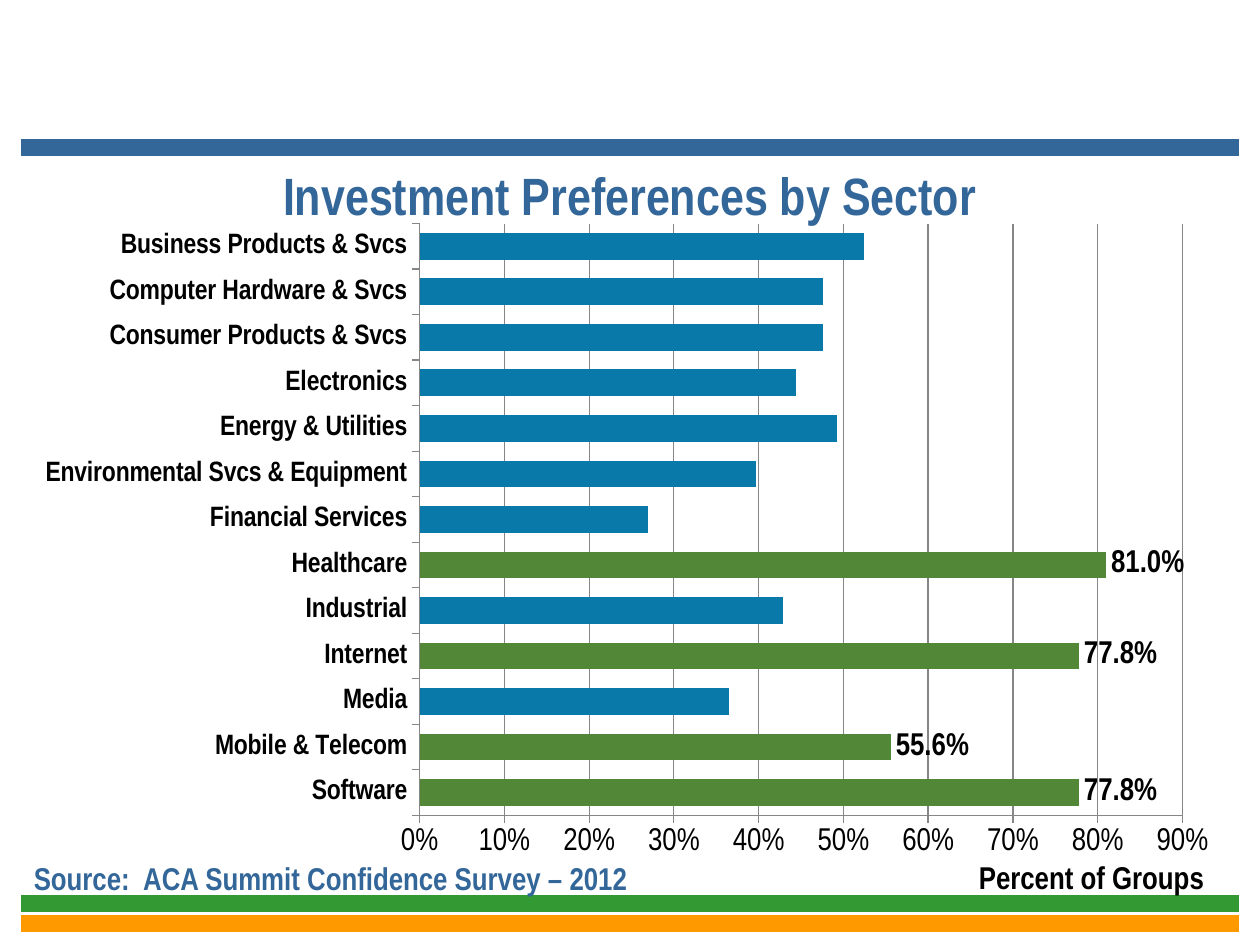
from typing import NamedTuple

from lxml import etree
from pptx import Presentation
from pptx.chart.data import CategoryChartData
from pptx.dml.color import RGBColor
from pptx.enum.chart import XL_CHART_TYPE, XL_LABEL_POSITION, XL_TICK_MARK
from pptx.enum.shapes import MSO_CONNECTOR
from pptx.enum.text import MSO_ANCHOR, MSO_AUTO_SIZE, PP_ALIGN
from pptx.oxml import parse_xml
from pptx.oxml.ns import nsdecls, qn
from pptx.util import Inches, Pt

FONT = "Arial Narrow"
BLACK, BLUE, GRID_GRAY = "000000", "336699", "868686"
BAR_BLUE, BAR_GREEN = "0979A9", "538738"


class Rule(NamedTuple):
    top: float
    color: str


class Label(NamedTuple):
    text: str
    left: float
    top: float
    width: float
    height: float
    size: int
    color: str
    centered: bool = False


class Sector(NamedTuple):
    name: str
    share: float
    highlighted: bool = False


RULES = [Rule(1.17, BLUE), Rule(7.33, "FF9900"), Rule(7.17, "339933")]

LABELS = [
    Label("Investment Preferences by Sector", 1.25, 1, 7.5, 1.08, 30, BLUE, True),
    Label("Percent of Groups", 7.67, 6.76, 2.11, 0.4, 18, BLACK),
    Label("Source:  ACA Summit Confidence Survey – 2012", 0.17, 6.77, 6.33, 0.4, 18, BLUE),
]

SECTORS = [
    Sector("Software", 0.778, True),
    Sector("Mobile & Telecom", 0.556, True),
    Sector("Media", 0.365),
    Sector("Internet", 0.778, True),
    Sector("Industrial", 0.429),
    Sector("Healthcare", 0.81, True),
    Sector("Financial Services", 0.27),
    Sector("Environmental Svcs & Equipment", 0.397),
    Sector("Energy & Utilities", 0.492),
    Sector("Electronics", 0.444),
    Sector("Consumer Products & Svcs", 0.476),
    Sector("Computer Hardware & Svcs", 0.476),
    Sector("Business Products & Svcs", 0.524),
]


def rgb(color: str) -> RGBColor:
    return RGBColor.from_string(color)


def style_font(font, size: int, color: str, bold: bool) -> None:
    font.name = FONT
    font.size = Pt(size)
    font.bold = bold
    font.color.rgb = rgb(color)


def draw_rule(page, rule: Rule) -> None:
    line = page.shapes.add_connector(
        MSO_CONNECTOR.STRAIGHT,
        Inches(0.17), Inches(rule.top), Inches(9.83), Inches(rule.top))
    line.line.color.rgb = rgb(rule.color)
    line.line.width = Pt(10)
    etree.SubElement(line._element.spPr, qn("a:effectLst"))


def draw_label(page, label: Label) -> None:
    box = page.shapes.add_textbox(
        Inches(label.left), Inches(label.top), Inches(label.width), Inches(label.height))
    frame = box.text_frame
    frame.text = label.text
    frame.word_wrap = True
    para = frame.paragraphs[0]
    if label.centered:
        frame.vertical_anchor = MSO_ANCHOR.MIDDLE
        para.alignment = PP_ALIGN.CENTER
    else:
        frame.auto_size = MSO_AUTO_SIZE.SHAPE_TO_FIT_TEXT
    style_font(para.runs[0].font, label.size, label.color, True)


def place_plot(chart, x: float, y: float, width: float, height: float) -> None:
    """Fix the inner plot area, in fractions of the chart frame."""
    plot_area = chart._chartSpace.chart.plotArea
    for old in plot_area.findall(qn("c:layout")):
        plot_area.remove(old)
    plot_area.insert(0, parse_xml(
        f'<c:layout {nsdecls("c")}><c:manualLayout><c:layoutTarget val="inner"/>'
        '<c:xMode val="edge"/><c:yMode val="edge"/>'
        f'<c:x val="{x}"/><c:y val="{y}"/><c:w val="{width}"/><c:h val="{height}"/>'
        '</c:manualLayout></c:layout>'))


def style_axes(chart) -> None:
    category_axis, value_axis = chart.category_axis, chart.value_axis
    for axis, size, bold in ((category_axis, 16, True), (value_axis, 18, False)):
        axis.major_tick_mark = XL_TICK_MARK.OUTSIDE
        axis.minor_tick_mark = XL_TICK_MARK.NONE
        axis.format.line.color.rgb = rgb(GRID_GRAY)
        style_font(axis.tick_labels.font, size, BLACK, bold)
    value_axis.minimum_scale = 0
    value_axis.maximum_scale = 0.9
    value_axis.major_unit = 0.1
    value_axis.tick_labels.number_format = "0%"
    value_axis.tick_labels.number_format_is_linked = False
    value_axis.has_major_gridlines = True
    value_axis.major_gridlines.format.line.color.rgb = rgb(GRID_GRAY)


def highlight_bars(series) -> None:
    """Colour the leading sectors and print their shares on white."""
    series.data_labels.show_value = False
    for index, sector in enumerate(SECTORS):
        if not sector.highlighted:
            continue
        point = series.points[index]
        point.format.fill.solid()
        point.format.fill.fore_color.rgb = rgb(BAR_GREEN)
        style_font(point.data_label.font, 18, BLACK, True)
        point.data_label.position = XL_LABEL_POSITION.OUTSIDE_END
    for label in series._element.iter(qn("c:dLbl")):
        label.insert(1, parse_xml(
            f'<c:numFmt {nsdecls("c")} formatCode="0.0%" sourceLinked="0"/>'))
        label.insert(2, parse_xml(
            f'<c:spPr {nsdecls("c", "a")}><a:solidFill><a:srgbClr val="FFFFFF"/>'
            '</a:solidFill></c:spPr>'))


def draw_chart(page) -> None:
    data = CategoryChartData(number_format="0.0%")
    data.categories = [sector.name for sector in SECTORS]
    data.add_series("Series 1", [sector.share for sector in SECTORS])
    chart = page.shapes.add_chart(
        XL_CHART_TYPE.BAR_CLUSTERED,
        Inches(0.16), Inches(1.67), Inches(9.61), Inches(5.22), data).chart
    chart.has_legend = False
    chart.has_title = False
    style_font(chart.font, 18, BLACK, False)
    place_plot(chart, 0.33, 0.02, 0.63, 0.9)
    style_axes(chart)

    plot = chart.plots[0]
    plot.gap_width = 70
    plot.vary_by_categories = False
    series = plot.series[0]
    series.invert_if_negative = False
    series.format.fill.solid()
    series.format.fill.fore_color.rgb = rgb(BAR_BLUE)
    highlight_bars(series)


def main() -> None:
    deck = Presentation()
    deck.slide_width, deck.slide_height = Inches(10), Inches(7.5)
    page = deck.slides.add_slide(deck.slide_layouts[6])
    for rule in RULES:
        draw_rule(page, rule)
    for label in LABELS:
        draw_label(page, label)
    draw_chart(page)
    deck.save("out.pptx")


if __name__ == "__main__":
    main()
